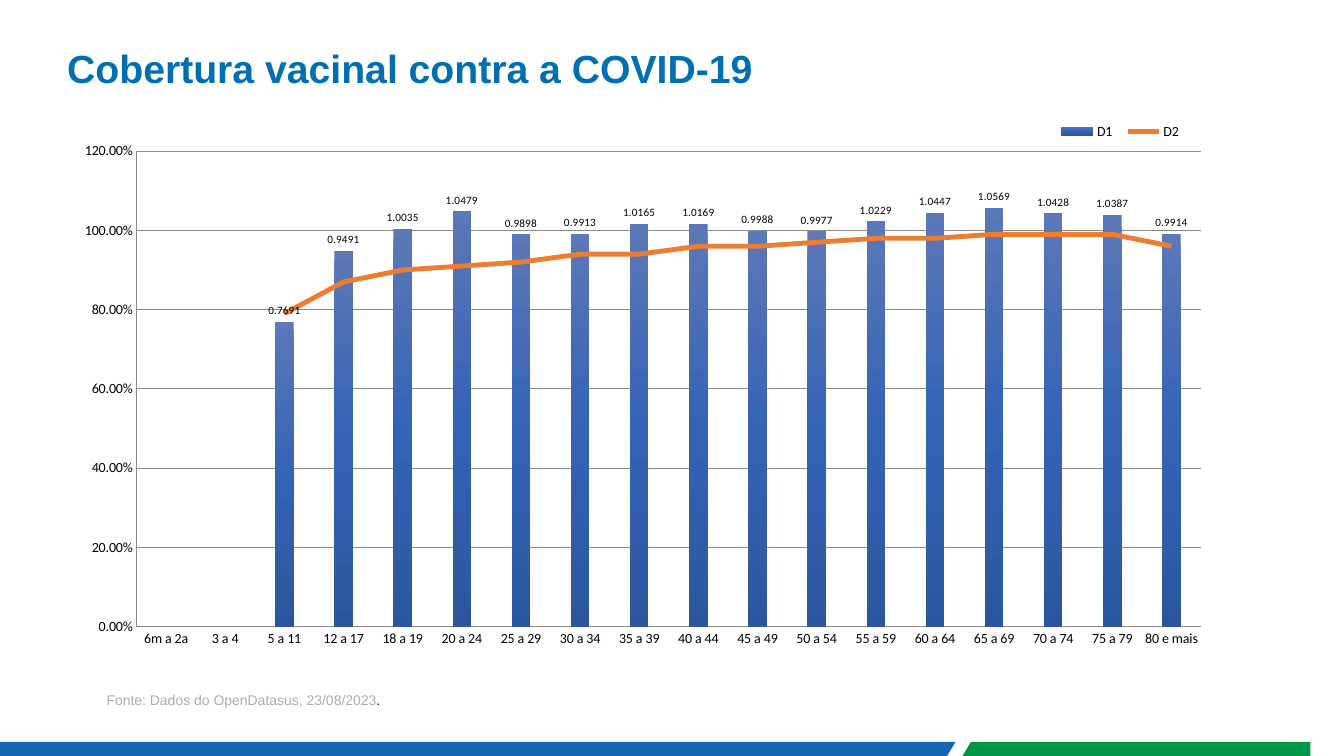
from dataclasses import dataclass

from lxml import etree
from pptx import Presentation
from pptx.chart.data import CategoryChartData
from pptx.dml.color import RGBColor
from pptx.enum.chart import XL_CHART_TYPE as ChartType
from pptx.enum.chart import XL_LABEL_POSITION as LabelPosition
from pptx.enum.chart import XL_LEGEND_POSITION as LegendPosition
from pptx.enum.chart import XL_MARKER_STYLE as MarkerStyle
from pptx.enum.chart import XL_TICK_MARK as TickMark
from pptx.enum.text import MSO_ANCHOR as Anchor
from pptx.enum.text import MSO_AUTO_SIZE as AutoSize
from pptx.enum.text import PP_ALIGN as Align
from pptx.oxml import parse_xml
from pptx.oxml.ns import nsdecls, qn
from pptx.util import Pt

AGES = ["6m a 2a", "3 a 4", "5 a 11", "12 a 17", "18 a 19"]
AGES += [f"{age} a {age + 4}" for age in range(20, 80, 5)] + ["80 e mais"]
FIRST_DOSE = [None, None, 0.7691, 0.9491, 1.0035, 1.0479, 0.9898, 0.9913, 1.0165,
              1.0169, 0.9988, 0.9977, 1.0229, 1.0447, 1.0569, 1.0428, 1.0387, 0.9914]
SECOND_DOSE = [None, None, 0.79, 0.87, 0.9, 0.91, 0.92, 0.94, 0.94,
               0.96, 0.96, 0.97, 0.98, 0.98, 0.99, 0.99, 0.99, 0.96]


@dataclass(frozen=True)
class Theme:
    heading_font: str = "Arial"
    chart_font: str = "Calibri"
    title_size: float = 28
    body_size: float = 10
    label_size: float = 8
    title: str = "006FB0"
    source: str = "AFABAB"
    text: str = "000000"
    grid: str = "8B8B8B"
    line: str = "ED7D31"
    blue_band: str = "1567B2"
    green_band: str = "009649"
    column_stops: tuple = ((0, "5B78B8"), (50, "3563B6"), (100, "2B569F"))


def format_font(font, name, size, color, bold=False):
    font.name = name
    font.size = Pt(size)
    font.bold = bold
    font.color.rgb = RGBColor.from_string(color)


def add_text(paragraph, text, **font_format):
    run = paragraph.add_run()
    run.text = text
    format_font(run.font, **font_format)


def manual_layout(x, y, width, height, inner=False):
    target = '<c:layoutTarget val="inner"/>' if inner else ""
    return parse_xml(
        f'<c:layout {nsdecls("c")}><c:manualLayout>{target}'
        '<c:xMode val="edge"/><c:yMode val="edge"/>'
        f'<c:x val="{x}"/><c:y val="{y}"/><c:w val="{width}"/><c:h val="{height}"/>'
        "</c:manualLayout></c:layout>")


class SlideBuilder:
    def __init__(self, slide, theme):
        self.slide = slide
        self.theme = theme

    def title(self, text, left, top, width, height):
        theme = self.theme
        shape = self.slide.shapes.title
        shape.left, shape.top, shape.width, shape.height = map(Pt, (left, top, width, height))
        frame = shape.text_frame
        frame.margin_left = frame.margin_right = frame.margin_top = frame.margin_bottom = 0
        frame.vertical_anchor = Anchor.MIDDLE
        frame.auto_size = AutoSize.NONE
        paragraph = frame.paragraphs[0]
        paragraph.alignment = Align.LEFT
        add_text(paragraph, text, name=theme.heading_font, size=theme.title_size,
                 color=theme.title, bold=True)

    def source(self, parts, left, top, width, height):
        theme = self.theme
        shape = self.slide.shapes.add_textbox(*map(Pt, (left, top, width, height)))
        frame = shape.text_frame
        frame.word_wrap = True
        frame.vertical_anchor = Anchor.BOTTOM
        paragraph = frame.paragraphs[0]
        paragraph.alignment = Align.JUSTIFY
        paragraph.line_spacing = 0.9
        for text, color in parts:
            add_text(paragraph, text, name=theme.heading_font, size=theme.body_size, color=color)

    def band(self, points, color):
        start, *others = [(Pt(x), Pt(y)) for x, y in points]
        builder = self.slide.shapes.build_freeform(*start)
        builder.add_line_segments(others)
        shape = builder.convert_to_shape()
        shape.shadow.inherit = False
        shape.fill.solid()
        shape.fill.fore_color.rgb = RGBColor.from_string(color)
        shape.line.fill.background()

    def coverage_chart(self, left, top, width, height):
        theme = self.theme
        data = CategoryChartData()
        data.categories = AGES
        data.add_series("D1", FIRST_DOSE)
        data.add_series("D2", SECOND_DOSE)
        chart = self.slide.shapes.add_chart(
            ChartType.COLUMN_CLUSTERED, *map(Pt, (left, top, width, height)), data).chart
        format_font(chart.font, theme.chart_font, theme.body_size, theme.text)
        chart.has_title = False
        self.format_axes(chart)
        self.format_columns(chart.plots[0])
        self.move_to_line(chart)
        area = chart.plots[0]._element.getparent()
        for layout in area.findall(qn("c:layout")):
            area.remove(layout)
        area.insert(0, manual_layout(0.06, 0.08, 0.92, 0.84, inner=True))
        chart.has_legend = True
        chart.legend.position = LegendPosition.BOTTOM
        chart.legend.include_in_layout = False
        legend = chart.legend._element
        for layout in legend.findall(qn("c:layout")):
            legend.remove(layout)
        legend.find(qn("c:legendPos")).addnext(manual_layout(0.85, 0.02, 0.12, 0.05))

    def format_axes(self, chart):
        grid = RGBColor.from_string(self.theme.grid)
        values = chart.value_axis
        values.minimum_scale, values.maximum_scale, values.major_unit = 0, 1.2, 0.2
        values.has_major_gridlines = True
        values.tick_labels.number_format = "0.00%"
        values.tick_labels.number_format_is_linked = False
        for axis in (chart.category_axis, values):
            axis.major_tick_mark = axis.minor_tick_mark = TickMark.NONE
        for line in (chart.category_axis.format.line, values.format.line,
                     values.major_gridlines.format.line):
            line.color.rgb = grid
            line.width = Pt(0.75)

    def format_columns(self, plot):
        theme = self.theme
        plot.gap_width = 219
        plot.overlap = -27
        plot.vary_by_categories = False
        columns = plot.series[0]
        stops = "".join(
            f'<a:gs pos="{position * 1000}"><a:srgbClr val="{color}"/></a:gs>'
            for position, color in theme.column_stops)
        columns.format.fill.background()
        empty_fill = columns._element.find(qn("c:spPr")).find(qn("a:noFill"))
        empty_fill.getparent().replace(empty_fill, parse_xml(
            f'<a:gradFill {nsdecls("a")} rotWithShape="1"><a:gsLst>{stops}</a:gsLst>'
            '<a:lin ang="5400000" scaled="0"/></a:gradFill>'))
        labels = columns.data_labels
        labels.show_value = True
        labels.position = LabelPosition.OUTSIDE_END
        format_font(labels.font, theme.chart_font, theme.label_size, theme.text)

    def move_to_line(self, chart):
        bars = chart.plots[0]._element
        series = bars.findall(qn("c:ser"))[1]
        for invert in series.findall(qn("c:invertIfNegative")):
            series.remove(invert)
        lines = parse_xml(
            f'<c:lineChart {nsdecls("c")}><c:grouping val="standard"/>'
            '<c:varyColors val="0"/><c:marker val="1"/></c:lineChart>')
        lines.insert(2, series)
        for axis in bars.findall(qn("c:axId")):
            etree.SubElement(lines, qn("c:axId")).set("val", axis.get("val"))
        bars.addnext(lines)
        second_dose = chart.plots[1].series[0]
        second_dose.smooth = False
        second_dose.marker.style = MarkerStyle.NONE
        second_dose.format.line.color.rgb = RGBColor.from_string(self.theme.line)
        second_dose.format.line.width = Pt(3.5)


def main():
    presentation = Presentation()
    presentation.slide_width = Pt(960)
    presentation.slide_height = Pt(540)
    theme = Theme()
    builder = SlideBuilder(
        presentation.slides.add_slide(presentation.slide_layouts[5]), theme)
    builder.band([(0, 530), (0, 540), (676.5, 540), (682.5, 530)], theme.blue_band)
    builder.band([(693.5, 530), (687.5, 540), (936, 540), (936, 530)], theme.green_band)
    builder.title("Cobertura vacinal contra a COVID-19", 48, 21.6, 864, 54)
    builder.source([("Fonte: Dados do OpenDatasus, 23/08/2023", theme.source),
                    (".", theme.text)], 69, 490.5, 306, 19.5)
    builder.coverage_chart(48, 75.6, 826.5, 404.5)
    presentation.save("out.pptx")


if __name__ == "__main__":
    main()
